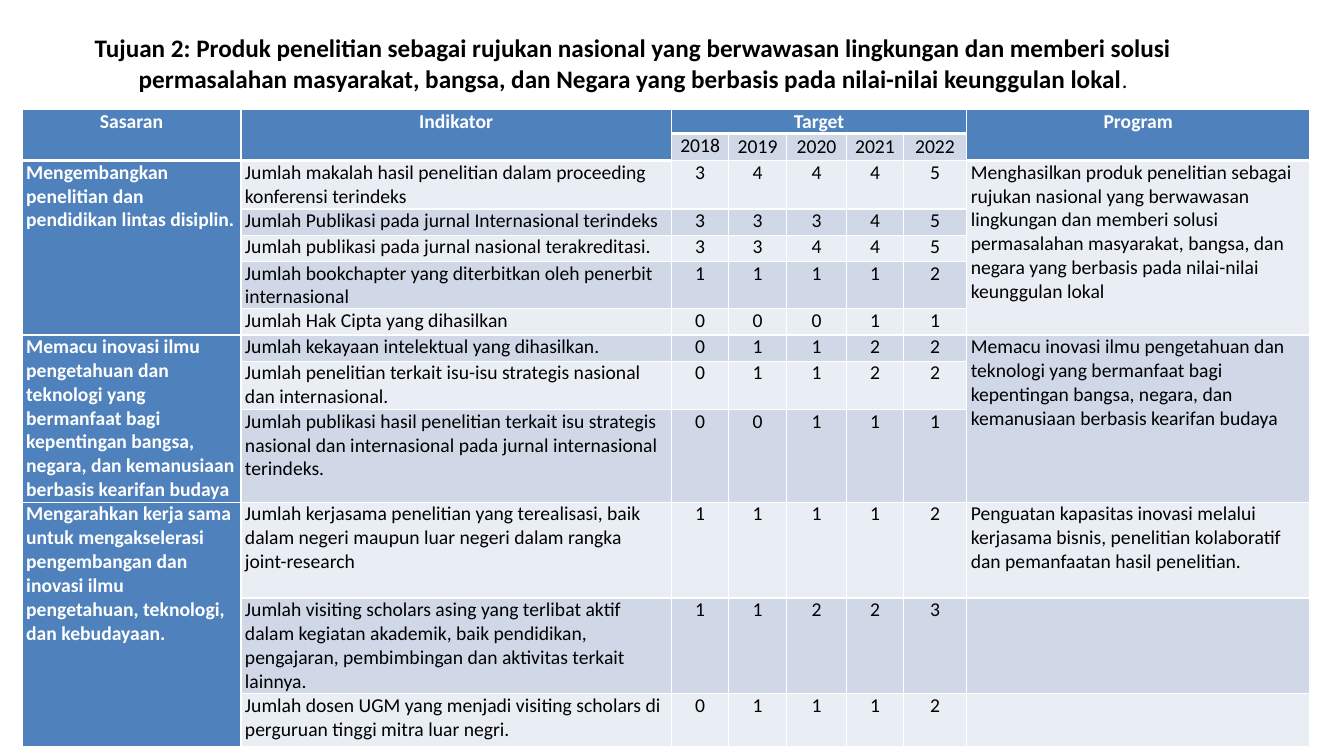
from dataclasses import dataclass

from lxml import etree
from pptx import Presentation
from pptx.dml.color import RGBColor
from pptx.enum.text import MSO_ANCHOR, PP_ALIGN
from pptx.oxml.ns import qn
from pptx.util import Inches, Pt

LEFT, CENTER = PP_ALIGN.LEFT, PP_ALIGN.CENTER
TOP, MIDDLE = MSO_ANCHOR.TOP, MSO_ANCHOR.MIDDLE


@dataclass(frozen=True)
class Theme:
    font: str = "Calibri"
    title_size: int = 18
    stop_size: int = 16
    table_size: int = 14
    black: str = "000000"
    white: str = "FFFFFF"
    header: str = "4F81BD"
    bands: tuple = ("E9EDF4", "D0D8E8")
    rule: int = 1
    thick_rule: int = 3


THEME = Theme()

TITLE = ("Tujuan 2: Produk penelitian sebagai rujukan nasional yang berwawasan "
         "lingkungan dan memberi solusi permasalahan masyarakat, bangsa, dan Negara "
         "yang berbasis pada nilai-nilai keunggulan lokal")
YEARS = ("2018", "2019", "2020", "2021", "2022")
COLUMN_WIDTHS = (2.17, 4.27, 0.57, 0.57, 0.6, 0.56, 0.63, 3.4)
ROW_HEIGHTS = (0.23, 0.27, 0.48, 0.26, 0.26, 0.47, 0.26,
               0.26, 0.48, 0.92, 0.95, 0.95, 0.52)
GOAL, INDICATOR, FIRST_YEAR, PROGRAM = 0, 1, 2, 7
HEADER_ROWS = 2

INNOVATION = ("Memacu inovasi ilmu pengetahuan dan teknologi yang bermanfaat bagi "
              "kepentingan bangsa, negara, dan kemanusiaan berbasis kearifan budaya")

# Each goal: sasaran, program, rows the program spans, indicators with yearly targets
GOALS = (
    ("Mengembangkan penelitian dan pendidikan lintas disiplin.",
     "Menghasilkan produk penelitian sebagai rujukan nasional yang berwawasan "
     "lingkungan dan memberi solusi permasalahan masyarakat, bangsa, dan negara "
     "yang berbasis pada nilai-nilai keunggulan lokal", 5, (
         ("Jumlah makalah hasil penelitian dalam proceeding konferensi terindeks",
          (3, 4, 4, 4, 5)),
         ("Jumlah Publikasi pada jurnal Internasional terindeks", (3, 3, 3, 4, 5)),
         ("Jumlah publikasi pada jurnal nasional terakreditasi.", (3, 3, 4, 4, 5)),
         ("Jumlah bookchapter yang diterbitkan oleh penerbit internasional",
          (1, 1, 1, 1, 2)),
         ("Jumlah Hak Cipta yang dihasilkan", (0, 0, 0, 1, 1)),
     )),
    (INNOVATION, INNOVATION, 3, (
        ("Jumlah kekayaan intelektual yang dihasilkan.", (0, 1, 1, 2, 2)),
        ("Jumlah penelitian terkait isu-isu strategis nasional dan internasional.",
         (0, 1, 1, 2, 2)),
        ("Jumlah publikasi hasil penelitian terkait isu strategis nasional dan "
         "internasional pada jurnal internasional terindeks.", (0, 0, 1, 1, 1)),
    )),
    ("Mengarahkan kerja sama untuk mengakselerasi pengembangan dan inovasi ilmu "
     "pengetahuan, teknologi, dan kebudayaan.",
     "Penguatan kapasitas inovasi melalui kerjasama bisnis, penelitian kolaboratif "
     "dan pemanfaatan hasil penelitian.", 1, (
         ("Jumlah kerjasama penelitian yang terealisasi, baik dalam negeri maupun "
          "luar negeri dalam rangka joint-research", (1, 1, 1, 1, 2)),
         ("Jumlah visiting scholars asing yang terlibat aktif dalam kegiatan "
          "akademik, baik pendidikan, pengajaran, pembimbingan dan aktivitas "
          "terkait lainnya.", (1, 1, 2, 2, 3)),
         ("Jumlah dosen UGM yang menjadi visiting scholars di perguruan tinggi "
          "mitra luar negri.", (0, 1, 1, 1, 2)),
     )),
)


def style_run(run, size, color, bold):
    run.font.name = THEME.font
    run.font.size = Pt(size)
    run.font.bold = bold
    run.font.color.rgb = RGBColor.from_string(color)


def add_title(slide):
    box = slide.shapes.add_textbox(Inches(0.53), Inches(0.27), Inches(11.5), Inches(0.71))
    frame = box.text_frame
    frame.word_wrap = True
    frame.vertical_anchor = MIDDLE
    frame.text = TITLE
    heading = frame.paragraphs[0]
    heading.alignment = CENTER
    style_run(heading.runs[0], THEME.title_size, THEME.black, True)
    full_stop = heading.add_run()
    full_stop.text = "."
    style_run(full_stop, THEME.stop_size, THEME.black, False)


def set_borders(cell, top, bottom):
    properties = cell._tc.get_or_add_tcPr()
    widths = {"a:lnL": THEME.rule, "a:lnR": THEME.rule, "a:lnT": top, "a:lnB": bottom}
    for tag, width in widths.items():
        line = etree.SubElement(properties, qn(tag), w=str(Pt(width)))
        fill = etree.SubElement(line, qn("a:solidFill"))
        etree.SubElement(fill, qn("a:srgbClr"), val=THEME.white)


def band(row):
    return THEME.bands[row % 2]


def base_fill(row, column):
    is_header = row == 0 or (row < HEADER_ROWS and column in (INDICATOR, PROGRAM))
    return THEME.header if is_header or column == GOAL else band(row)


def style_grid(table):
    for row in range(len(ROW_HEIGHTS)):
        for column in range(len(COLUMN_WIDTHS)):
            cell = table.cell(row, column)
            is_year = FIRST_YEAR <= column < PROGRAM
            thick_row = 0 if is_year else HEADER_ROWS - 1
            set_borders(cell,
                        THEME.thick_rule if row == thick_row + 1 else THEME.rule,
                        THEME.thick_rule if row == thick_row else THEME.rule)
            cell.fill.solid()
            cell.fill.fore_color.rgb = RGBColor.from_string(base_fill(row, column))
            cell.margin_left = cell.margin_right = Inches(0.04)
            cell.margin_top = cell.margin_bottom = 0


def write_cell(cell, text, align=LEFT, color=THEME.black, bold=False, anchor=TOP):
    cell.text_frame.text = text
    cell.vertical_anchor = anchor
    paragraph = cell.text_frame.paragraphs[0]
    paragraph.alignment = align
    style_run(paragraph.runs[0], THEME.table_size, color, bold)


def write_header(table):
    for column, label in ((GOAL, "Sasaran"), (INDICATOR, "Indikator"),
                          (FIRST_YEAR, "Target"), (PROGRAM, "Program")):
        last = (0, PROGRAM - 1) if column == FIRST_YEAR else (1, column)
        table.cell(0, column).merge(table.cell(*last))
        write_cell(table.cell(0, column), label, CENTER, THEME.white, True)
    for offset, year in enumerate(YEARS):
        write_cell(table.cell(1, FIRST_YEAR + offset), year, CENTER,
                   anchor=MIDDLE if offset else TOP)


def write_goal(table, first_row, goal, program, program_rows, indicators):
    for column, span in ((GOAL, len(indicators)), (PROGRAM, program_rows)):
        if span > 1:
            table.cell(first_row, column).merge(table.cell(first_row + span - 1, column))
    write_cell(table.cell(first_row, GOAL), goal, color=THEME.white, bold=True)
    write_cell(table.cell(first_row, PROGRAM), program)
    for row, (indicator, targets) in enumerate(indicators, first_row):
        write_cell(table.cell(row, INDICATOR), indicator)
        for column, target in enumerate(targets, FIRST_YEAR):
            write_cell(table.cell(row, column), str(target), CENTER)


def add_target_table(slide):
    table = slide.shapes.add_table(
        len(ROW_HEIGHTS), len(COLUMN_WIDTHS), Inches(0.22), Inches(1.09),
        Inches(sum(COLUMN_WIDTHS)), Inches(sum(ROW_HEIGHTS))).table
    for column, width in zip(table.columns, COLUMN_WIDTHS):
        column.width = Inches(width)
    for row, height in zip(table.rows, ROW_HEIGHTS):
        row.height = Inches(height)
    style_grid(table)
    write_header(table)
    first_row = HEADER_ROWS
    for goal, program, program_rows, indicators in GOALS:
        write_goal(table, first_row, goal, program, program_rows, indicators)
        first_row += len(indicators)


def main():
    deck = Presentation()
    deck.slide_width, deck.slide_height = Inches(13.33), Inches(7.5)
    slide = deck.slides.add_slide(deck.slide_layouts[6])
    add_title(slide)
    add_target_table(slide)
    deck.save("out.pptx")


if __name__ == "__main__":
    main()
